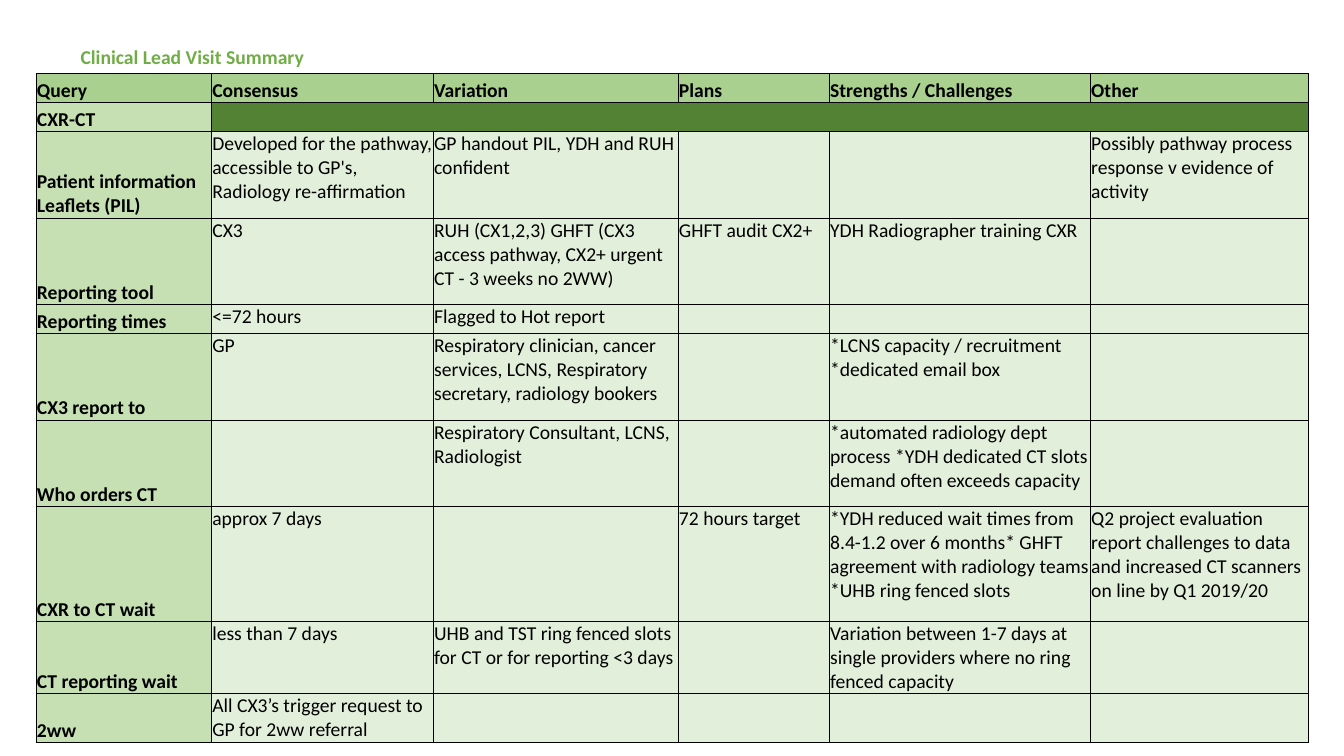
from dataclasses import dataclass

from lxml.etree import SubElement
from pptx import Presentation
from pptx.dml.color import RGBColor as Rgb
from pptx.enum.text import MSO_ANCHOR as Anchor, MSO_AUTO_SIZE as AutoSize
from pptx.oxml.ns import qn
from pptx.util import Cm, Pt


@dataclass(frozen=True)
class Theme:
    font: str = "Calibri"
    text_size: float = 14
    title: str = "70AD47"
    text: str = "000000"
    border: str = "000000"
    header: str = "A9D08E"
    label: str = "C6E0B4"
    band: str = "548235"
    body: str = "E2EFDA"
    thin: float = 0.5
    thick: float = 1
    cell_inset: float = 0.02


# Table content
HEADERS = ["Query", "Consensus", "Variation", "Plans", "Strengths / Challenges", "Other"]
ROWS = [
    HEADERS,
    ["CXR-CT", "", "", "", "", ""],
    ["Patient information Leaflets (PIL)",
     "Developed for the pathway, accessible to GP's, Radiology re-affirmation",
     "GP handout PIL, YDH and RUH confident", "", "",
     "Possibly pathway process response v evidence of activity"],
    ["Reporting tool", "CX3",
     "RUH (CX1,2,3) GHFT (CX3 access pathway, CX2+ urgent CT - 3 weeks no 2WW)",
     "GHFT audit CX2+", "YDH Radiographer training CXR", ""],
    ["Reporting times", "<=72 hours", "Flagged to Hot report", "", "", ""],
    ["CX3 report to", "GP",
     "Respiratory clinician, cancer services, LCNS, Respiratory secretary, radiology bookers",
     "", "*LCNS capacity / recruitment *dedicated email box", ""],
    ["Who orders CT", "", "Respiratory Consultant, LCNS, Radiologist", "",
     "*automated radiology dept process *YDH dedicated CT slots "
     "demand often exceeds capacity", ""],
    ["CXR to CT wait", "approx 7 days", "", "72 hours target",
     "*YDH reduced wait times from 8.4-1.2 over 6 months* GHFT agreement "
     "with radiology teams *UHB ring fenced slots",
     "Q2 project evaluation report challenges to data and increased CT scanners "
     "on line by Q1 2019/20"],
    ["CT reporting wait", "less than 7 days",
     "UHB and TST ring fenced slots for CT or for reporting <3 days", "",
     "Variation between 1-7 days at single providers where no ring fenced capacity", ""],
    ["2ww", "All CX3’s trigger request to GP for 2ww referral", "", "", "", ""],
]
COLUMN_WIDTHS = [4.42, 5.59, 6.17, 3.81, 6.58, 5.49]
SHORT, TALL = 0.73, 2.18
ROW_HEIGHTS = [SHORT, SHORT, TALL, TALL, SHORT, TALL, TALL, 2.9, 1.81, 1.24]
BAND_ROW = 1


class SlideBuilder:
    def __init__(self, slide, theme):
        self.slide = slide
        self.theme = theme

    def format_text(self, paragraph, color, bold):
        for run in paragraph.runs:
            run.font.name = self.theme.font
            run.font.size = Pt(self.theme.text_size)
            run.font.bold = bold
            run.font.color.rgb = Rgb.from_string(color)

    def title(self, text, left, top, width, height):
        box = self.slide.shapes.add_textbox(Cm(left), Cm(top), Cm(width), Cm(height))
        frame = box.text_frame
        frame.word_wrap = True
        frame.auto_size = AutoSize.SHAPE_TO_FIT_TEXT
        frame.text = text
        paragraph = frame.paragraphs[0]
        paragraph.line_spacing = 0.9
        self.format_text(paragraph, self.theme.title, True)

    def table(self, rows, left, top, widths, heights):
        frame = self.slide.shapes.add_table(
            len(rows), len(widths), Cm(left), Cm(top), Cm(sum(widths)), Cm(sum(heights)))
        table = frame.table
        table.first_row = table.horz_banding = False
        for column, width in zip(table.columns, widths):
            column.width = Cm(width)
        for row, height in zip(table.rows, heights):
            row.height = Cm(height)
        table.cell(BAND_ROW, 1).merge(table.cell(BAND_ROW, len(widths) - 1))

        last_row, last_column = len(rows) - 1, len(widths) - 1
        for i, texts in enumerate(rows):
            for j, text in enumerate(texts):
                cell = table.cell(i, j)
                if cell.is_spanned:
                    continue
                self.cell(cell, text, self.cell_fill(i, j), i == 0 or j == 0)
                # Thick frame, with a thick rule above the last row
                self.borders(cell, {
                    "a:lnL": j == 0,
                    "a:lnR": j == last_column or cell.is_merge_origin,
                    "a:lnT": i in (0, last_row),
                    "a:lnB": i >= last_row - 1,
                })

    def cell_fill(self, row, column):
        if row == 0:
            return self.theme.header
        if column == 0:
            return self.theme.label
        return self.theme.band if row == BAND_ROW else self.theme.body

    def cell(self, cell, text, fill, heading):
        cell.fill.solid()
        cell.fill.fore_color.rgb = Rgb.from_string(fill)
        cell.margin_left = cell.margin_right = cell.margin_top = Cm(self.theme.cell_inset)
        cell.margin_bottom = 0
        cell.vertical_anchor = Anchor.BOTTOM if heading else Anchor.TOP
        paragraph = cell.text_frame.paragraphs[0]
        if text:
            paragraph.text = text
            self.format_text(paragraph, self.theme.text, heading)
        else:
            # Keeps an empty cell from stretching its row
            end = SubElement(paragraph._p, qn("a:endParaRPr"))
            end.set("sz", str(self.theme.text_size * 100))

    def borders(self, cell, sides):
        properties = cell._tc.get_or_add_tcPr()
        for position, (tag, is_thick) in enumerate(sides.items()):
            line = SubElement(properties, qn(tag))
            line.set("w", str(Pt(self.theme.thick if is_thick else self.theme.thin)))
            fill = SubElement(line, qn("a:solidFill"))
            SubElement(fill, qn("a:srgbClr")).set("val", self.theme.border)
            properties.insert(position, line)


def main():
    presentation = Presentation()
    presentation.slide_width, presentation.slide_height = Cm(33.87), Cm(19.05)
    slide = presentation.slides.add_slide(presentation.slide_layouts[6])
    builder = SlideBuilder(slide, Theme())

    # Heading
    builder.title("Clinical Lead Visit Summary", 1.78, 1.07, 27.28, 0.79)
    # Summary table
    builder.table(ROWS, 0.91, 1.85, COLUMN_WIDTHS, ROW_HEIGHTS)

    presentation.save("out.pptx")


if __name__ == "__main__":
    main()
